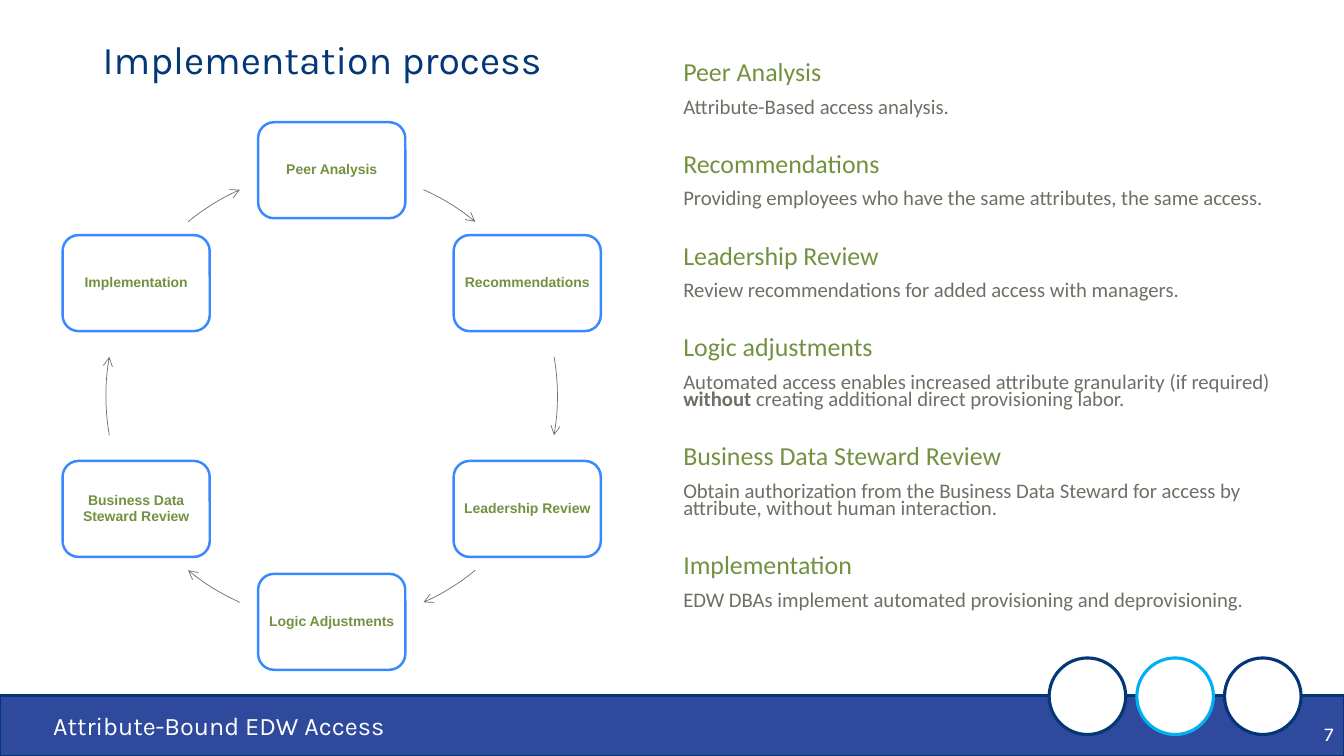
from dataclasses import dataclass
from math import cos, radians, sin

from lxml import etree
from pptx import Presentation
from pptx.dml.color import RGBColor
from pptx.enum.shapes import MSO_SHAPE
from pptx.enum.text import MSO_ANCHOR, PP_ALIGN
from pptx.oxml.ns import qn
from pptx.util import Cm, Pt

RECT, OVAL = MSO_SHAPE.RECTANGLE, MSO_SHAPE.OVAL
ROUND, ARC = MSO_SHAPE.ROUNDED_RECTANGLE, MSO_SHAPE.ARC
LEFT, MID, RIGHT = PP_ALIGN.LEFT, PP_ALIGN.CENTER, PP_ALIGN.RIGHT
TOP, CENTER = MSO_ANCHOR.TOP, MSO_ANCHOR.MIDDLE

NAVY, WHITE, GREEN, GRAY = "043776", "FFFFFF", "739141", "706E65"


@dataclass
class Step:
    name: str
    turn: int     # degrees clockwise from the right
    start: float  # arrow that leads to the next step
    end: float


@dataclass
class Note:
    head: str
    runs: list[tuple[str, bool]]


@dataclass
class Ring:
    left: float
    color: str


STEPS = [
    Step("Peer Analysis", 270, 294, 309.5),
    Step("Recommendations", 330, 350, 10),
    Step("Leadership Review", 30, 50.5, 66),
    Step("Logic Adjustments", 90, 114, 129.5),
    Step("Business Data Steward Review", 150, 170, 190),
    Step("Implementation", 210, 230.5, 246),
]
NOTES = [
    Note("Peer Analysis", [("Attribute-Based access analysis.", False)]),
    Note("Recommendations", [
        ("Providing employees who have the same attributes, the same access.", False)]),
    Note("Leadership Review", [
        ("Review recommendations for added access with managers.", False)]),
    Note("Logic adjustments", [
        ("Automated access enables increased attribute granularity (if required) ", False),
        ("without", True),
        (" creating additional direct provisioning labor.", False)]),
    Note("Business Data Steward Review", [
        ("Obtain authorization from the Business Data Steward for access by "
         "attribute, without human interaction.", False)]),
    Note("Implementation", [
        ("EDW DBAs implement automated provisioning and deprovisioning.", False)]),
]
RINGS = [Ring(30.86, "033676"), Ring(28.65, "00B0F0"), Ring(26.44, NAVY)]

deck = Presentation()
deck.slide_width, deck.slide_height = Cm(33.87), Cm(19.05)
slide = deck.slides.add_slide(deck.slide_layouts[6])


def rgb(color: str) -> RGBColor:
    return RGBColor.from_string(color)


def shape(kind, x: float, y: float, w: float, h: float,
          fill: str | None, line: str, width: float):
    item = slide.shapes.add_shape(kind, Cm(x), Cm(y), Cm(w), Cm(h))
    item.shadow.inherit = False
    if fill:
        item.fill.solid()
        item.fill.fore_color.rgb = rgb(fill)
    else:
        item.fill.background()
    item.line.color.rgb = rgb(line)
    item.line.width = Pt(width)
    return item


def frame(x: float, y: float, w: float, h: float, anchor=TOP):
    body = slide.shapes.add_textbox(Cm(x), Cm(y), Cm(w), Cm(h)).text_frame
    body.word_wrap = True
    body.vertical_anchor = anchor
    return body


def write(para, text: str, *, size: float, font: str, color: str, bold: bool = False,
          align=LEFT, space: float = 1, before: float = 0) -> None:
    para.alignment = align
    para.line_spacing = space
    para.space_before = Pt(before)
    run = para.add_run()
    run.text = text
    run.font.size, run.font.name, run.font.bold = Pt(size), font, bold
    run.font.color.rgb = rgb(color)


def footer() -> None:
    shape(RECT, 0, 17.53, 33.87, 1.52, "2F499D", "033676", 1.75)
    for ring in RINGS:
        shape(OVAL, ring.left, 16.58, 1.93, 1.93, WHITE, ring.color, 2.25)
    write(frame(1.09, 17.78, 22.86, 1.02).paragraphs[0], "Attribute-Bound EDW Access",
          size=18, font="Karla", color=WHITE)
    write(frame(32.61, 18.06, 1.25, 0.86).paragraphs[0], "7",
          size=14, font="Karla", color=WHITE, align=RIGHT)


def cycle(x: float, y: float, radius: float, w: float, h: float) -> None:
    for step in STEPS:
        turn = radians(step.turn)
        box = shape(ROUND, x + radius * cos(turn) - w / 2, y + radius * sin(turn) - h / 2,
                    w, h, WHITE, "3888FF", 1.75)
        body = box.text_frame
        body.word_wrap = True
        body.vertical_anchor = CENTER
        body.margin_left = body.margin_right = Cm(0.1)
        body.margin_top = body.margin_bottom = Cm(0.1)
        write(body.paragraphs[0], step.name, size=10, font="Arial", color=GREEN,
              bold=True, align=MID, space=0.9)

        arc = shape(ARC, x - radius, y - radius, 2 * radius, 2 * radius, None, GRAY, 0.5)
        # Angles are stored in 60000ths of a degree, adjustments in 100000ths
        arc.adjustments[0] = step.start * 0.6
        arc.adjustments[1] = step.end * 0.6
        etree.SubElement(arc.line._get_or_add_ln(), qn("a:tailEnd"), type="arrow")


def notes() -> None:
    body = frame(16.97, 1.5, 15.88, 15.11)
    for i, note in enumerate(NOTES):
        head = body.add_paragraph() if i else body.paragraphs[0]
        write(head, note.head, size=18.5, font="Calibri", color=GREEN,
              space=0.7, before=27.5 if i else 0)
        para = body.add_paragraph()
        for text, bold in note.runs:
            write(para, text, size=14.8, font="Calibri", color=GRAY, bold=bold,
                  space=0.7, before=10)


def main() -> None:
    # Footer band
    footer()
    # Title
    write(frame(2.34, 0.74, 29.21, 1.63, CENTER).paragraphs[0], "Implementation process",
          size=28, font="Karla", color=NAVY, space=0.9)
    # Process cycle and its explanation
    cycle(8.36, 9.98, 5.69, 3.71, 2.42)
    notes()
    deck.save("out.pptx")


if __name__ == "__main__":
    main()
